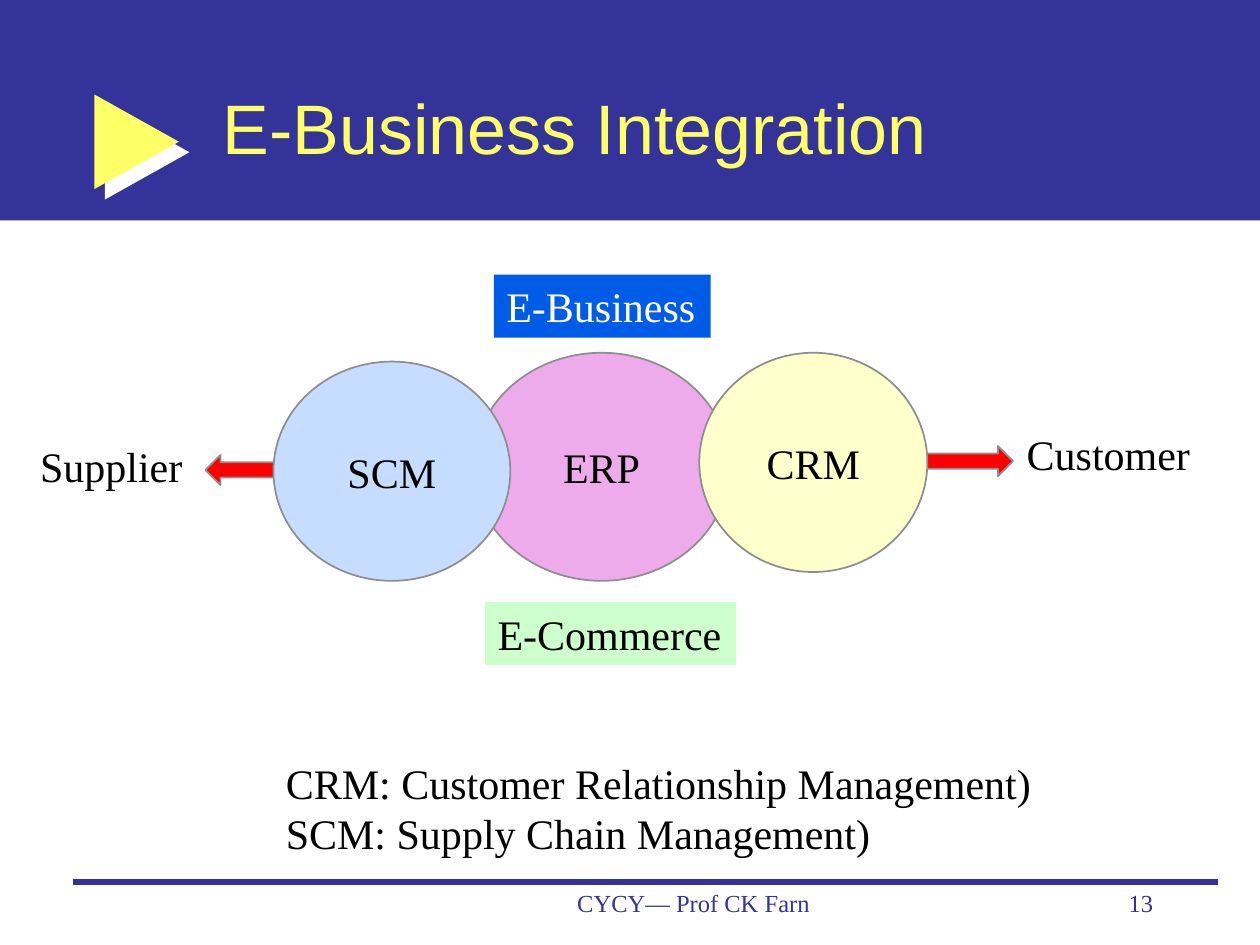
from dataclasses import dataclass

from lxml.etree import SubElement
from pptx import Presentation
from pptx.dml.color import RGBColor
from pptx.enum.shapes import MSO_CONNECTOR, MSO_SHAPE
from pptx.enum.text import MSO_ANCHOR, MSO_AUTO_SIZE, PP_ALIGN
from pptx.oxml.ns import qn
from pptx.util import Inches, Pt

CELL = Inches(0.1)  # the page is a grid of 100 columns by 75 rows
COLUMNS, ROWS = 100, 75


@dataclass(frozen=True)
class Theme:
    navy: str = "333399"
    yellow: str = "FFFF66"
    white: str = "FFFFFF"
    black: str = "000000"
    outline: str = "8E8E8E"
    red: str = "FF0000"
    pink: str = "EDABEB"
    sky: str = "C7DDFF"
    cream: str = "FFFFCC"
    green: str = "CCFFCC"
    blue: str = "005CE7"
    title_font: str = "Arial"
    body_font: str = "Times New Roman"
    title_size: int = 40
    body_size: int = 24
    footer_size: int = 14


THEME = Theme()


@dataclass(frozen=True)
class Box:
    left: float
    top: float
    width: float
    height: float

    def inner(self, left, top, width, height):
        """Return a box whose left and top count from this box's corner."""
        return Box(self.left + left, self.top + top, width, height)

    def lengths(self):
        cells = (self.left, self.top, self.width, self.height)
        return [round(value * CELL) for value in cells]


def write(shape, lines, size=THEME.body_size, font=THEME.body_font,
          color=THEME.black, align=PP_ALIGN.LEFT, **frame_format):
    """Fill a shape with one paragraph per line; frame_format sets its text frame."""
    frame = shape.text_frame
    settings = {"word_wrap": True, "vertical_anchor": MSO_ANCHOR.TOP, **frame_format}
    for name, value in settings.items():
        setattr(frame, name, value)
    for index, line in enumerate(lines):
        para = frame.add_paragraph() if index else frame.paragraphs[0]
        para.alignment = align
        span = para.add_run()
        span.text = line
        for name, value in {"size": Pt(size), "name": font}.items():
            setattr(span.font, name, value)
        span.font.color.rgb = RGBColor.from_string(color)


def add_text(page, box, *lines, **text_format):
    write(page.shapes.add_textbox(*box.lengths()), lines, **text_format)


def add_figure(page, kind, box, fill, outline=None):
    shape = page.shapes.add_shape(kind, *box.lengths())
    shape.shadow.inherit = False
    shape.fill.solid()
    shape.fill.fore_color.rgb = RGBColor.from_string(fill)
    if outline:
        shape.line.color.rgb = RGBColor.from_string(outline)
        shape.line.width = Pt(1)
    else:
        shape.line.fill.background()
    return shape


def add_hard_shadow(shape, color):
    effects = shape._element.spPr.find(qn("a:effectLst"))
    shadow = SubElement(effects, qn("a:outerShdw"), dist=str(Pt(8.5)),
                        dir=str(45 * 60000), algn="ctr", rotWithShape="0")
    SubElement(shadow, qn("a:srgbClr"), val=color)


def add_header(page, box, title):
    add_figure(page, MSO_SHAPE.RECTANGLE, box, THEME.navy)
    marker = add_figure(page, MSO_SHAPE.RIGHT_ARROW, box.inner(7.5, 7.5, 6.7, 7.5),
                        THEME.yellow)
    marker.adjustments[0], marker.adjustments[1] = 0.38, 1
    add_hard_shadow(marker, THEME.white)
    add_text(page, box.inner(16.7, 6.2, 75.8, 12.5), title, size=THEME.title_size,
             font=THEME.title_font, color=THEME.yellow)


def add_diagram(page, box):
    arrows = [
        (MSO_SHAPE.LEFT_ARROW, (14.1, 14.3)),
        (MSO_SHAPE.RIGHT_ARROW, (65, 13.6)),
    ]
    circles = [
        ("ERP", THEME.pink, (35.4, 6.2, 20.3, 18.1)),
        ("SCM", THEME.sky, (19.5, 6.9, 18.8, 17.4)),
        ("CRM", THEME.cream, (53.3, 6.2, 18.1, 17.4)),
    ]
    banners = [
        ("E-Commerce", THEME.green, THEME.black, (36.3, 26, 19.9, 5)),
        ("E-Business", THEME.blue, THEME.white, (37, 0, 17.2, 5)),
    ]
    partners = [
        ("Supplier", (0, 12.7, 13.4, 5)),
        ("Customer", (78.3, 11.7, 15.1, 5)),
    ]
    fitted = {"word_wrap": False, "auto_size": MSO_AUTO_SIZE.SHAPE_TO_FIT_TEXT}
    for kind, corner in arrows:
        add_figure(page, kind, box.inner(*corner, 13.2, 2.4), THEME.red, THEME.outline)
    for label, fill, place in circles:
        circle = add_figure(page, MSO_SHAPE.OVAL, box.inner(*place), fill, THEME.outline)
        write(circle, [label], align=PP_ALIGN.CENTER, vertical_anchor=MSO_ANCHOR.MIDDLE)
    for label, fill, color, place in banners:
        banner = add_figure(page, MSO_SHAPE.RECTANGLE, box.inner(*place), fill)
        write(banner, [label], color=color, **fitted)
    for label, place in partners:
        add_text(page, box.inner(*place), label, **fitted)


def add_footer(page, box, author, number):
    left, top, width, _ = box.lengths()
    rule = page.shapes.add_connector(MSO_CONNECTOR.STRAIGHT, left, top, left + width, top)
    rule.line.color.rgb = RGBColor.from_string(THEME.navy)
    rule.line.width = Pt(3)
    SubElement(rule._element.spPr, qn("a:effectLst"))
    small = {"size": THEME.footer_size, "color": THEME.navy}
    add_text(page, box.inner(33.4, 0, 31.7, 5), author, align=PP_ALIGN.CENTER, **small)
    add_text(page, box.inner(65.9, 0, 20.8, 5), number, align=PP_ALIGN.RIGHT, **small)


def main():
    deck = Presentation()
    deck.slide_width, deck.slide_height = COLUMNS * CELL, ROWS * CELL
    page = deck.slides.add_slide(deck.slide_layouts[6])
    add_header(page, Box(0, 0, COLUMNS, 17.5), "E-Business Integration")
    add_diagram(page, Box(2.2, 21.8, 93.4, 31))
    add_text(page, Box(21.7, 59.6, 66.5, 9.1),
             "CRM: Customer Relationship Management)",
             "SCM: Supply Chain Management)",
             auto_size=MSO_AUTO_SIZE.SHAPE_TO_FIT_TEXT)
    add_footer(page, Box(5.8, 70, 90.9, 5), "CYCY— Prof CK Farn", "13")
    deck.save("out.pptx")


if __name__ == "__main__":
    main()
